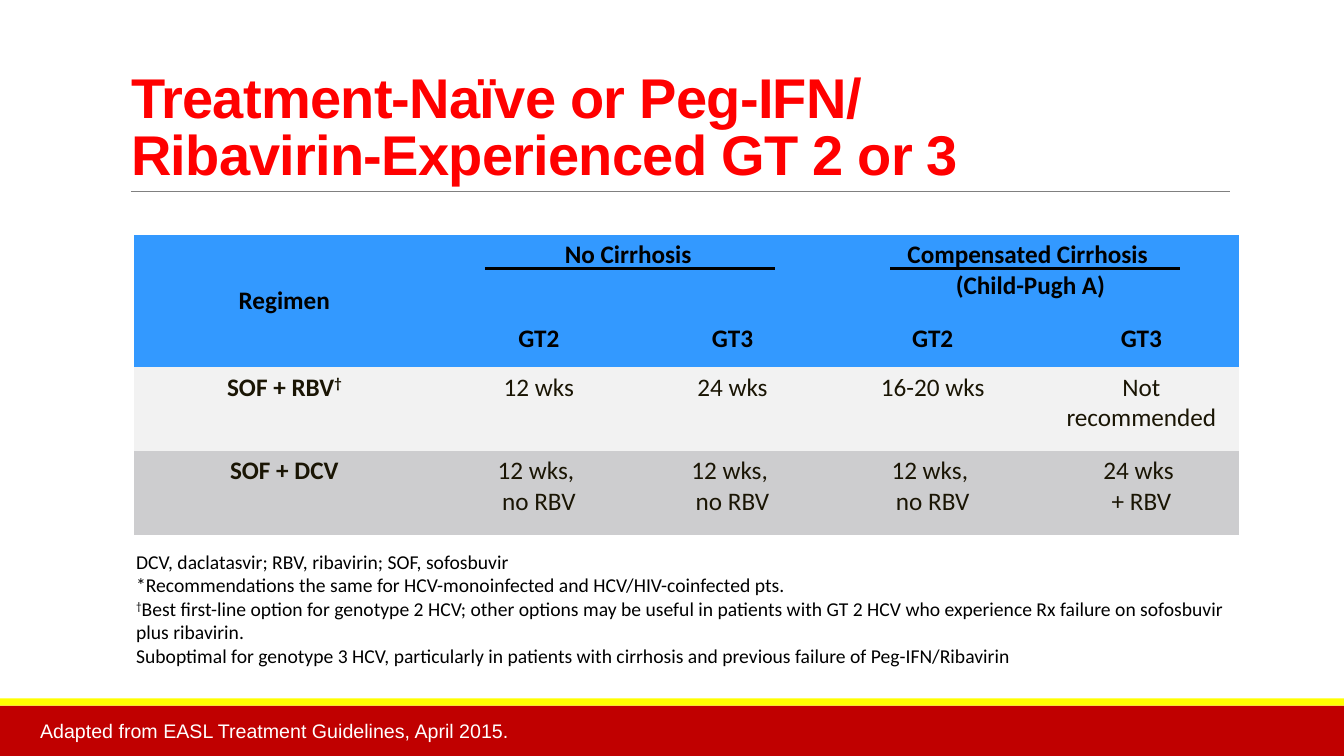
import collections
import itertools

import pptx
import pptx.dml.color
import pptx.enum.shapes
import pptx.enum.text
import pptx.oxml
import pptx.util
from pptx.util import Cm

Align = pptx.enum.text.PP_ALIGN
Anchor = pptx.enum.text.MSO_ANCHOR
Box = collections.namedtuple("Box", "left top width height")
Style = collections.namedtuple("Style", "font size color bold")


class Theme:
    red, yellow, grey, black = "C00000", "FFFF00", "808080", "000000"
    header, light_row, dark_row = "3399FF", "F2F2F2", "CDCDCF"
    title = Style("Arial", 40, "FF0000", True)
    heading = Style("Calibri", 18, black, True)
    regimen = Style("Calibri", 18, "1A1504", True)
    duration = Style("Calibri", 18, "1A1504", False)
    note = Style("Calibri", 14, black, False)
    source = Style("Arial", 14, "FFFFFF", False)


NO_TABLE_STYLE = "{2D5ABB26-0587-4C30-8999-92F81FD0307C}"
COLUMN_WIDTHS = (7.57, 5.26, 4.5, 5.59, 4.93)
ROW_HEIGHTS = (2.11, 1.22, 2.11, 2.11)
HEADER_ROWS = 2
ROW_FILLS = (Theme.header, Theme.header, Theme.light_row, Theme.dark_row)
CELL_TEXTS = (
    ("Regimen", "No Cirrhosis", "", "Compensated Cirrhosis \n(Child-Pugh A)", ""),
    ("", "GT2", "GT3", "GT2", "GT3"),
    ("SOF + RBV†", "12 wks", "24 wks", "16-20 wks", "Not recommended"),
    ("SOF + DCV", *["12 wks, \nno RBV"] * 3, "24 wks \n+ RBV"),
)
NOTES = (
    "DCV, daclatasvir; RBV, ribavirin; SOF, sofosbuvir",
    "*Recommendations the same for HCV-monoinfected and HCV/HIV-coinfected pts.",
    "†Best first-line option for genotype 2 HCV; other options may be useful in "
    "patients with GT 2 HCV who experience Rx failure on sofosbuvir plus ribavirin.",
    "Suboptimal for genotype 3 HCV, particularly in patients with cirrhosis and "
    "previous failure of Peg-IFN/Ribavirin",
)


def rgb(color):
    return pptx.dml.color.RGBColor.from_string(color)


def lengths(box):
    return [Cm(value) for value in box]


def write(para, text, style, align=Align.LEFT, spacing=None):
    """Add text as runs, with line breaks at newlines and daggers raised."""
    para.alignment = align
    for index, line in enumerate(text.split("\n")):
        if index:
            para.add_line_break()
        for piece in filter(None, line.partition("†")):
            span = para.add_run()
            span.text = piece
            span.font.name = style.font
            span.font.size = pptx.util.Pt(style.size)
            span.font.bold = style.bold
            span.font.color.rgb = rgb(style.color)
            properties = span._r.get_or_add_rPr()
            if piece == "†":
                properties.set("baseline", "30000")
            if spacing is not None:
                properties.set("spc", str(spacing))


def add_band(page, box, color):
    band = page.shapes.add_shape(
        pptx.enum.shapes.MSO_SHAPE.RECTANGLE, *lengths(box))
    band.shadow.inherit = False
    band.fill.solid()
    band.fill.fore_color.rgb = rgb(color)
    band.line.fill.background()


def add_rule(page, left, top, width, color, weight):
    rule = page.shapes.add_connector(
        pptx.enum.shapes.MSO_CONNECTOR.STRAIGHT,
        Cm(left), Cm(top), Cm(left + width), Cm(top))
    rule.line.color.rgb = rgb(color)
    rule.line.width = pptx.util.Pt(weight)
    rule._element.spPr.append(pptx.oxml.parse_xml(
        '<a:effectLst xmlns:a='
        '"http://schemas.openxmlformats.org/drawingml/2006/main"/>'))


def add_text_box(page, box, texts, style, anchor=Anchor.TOP):
    frame = page.shapes.add_textbox(*lengths(box)).text_frame
    frame.word_wrap = True
    frame.vertical_anchor = anchor
    for index, text in enumerate(texts):
        para = frame.add_paragraph() if index else frame.paragraphs[0]
        write(para, text, style)


def add_title(page, box):
    title = page.shapes.title
    title.left, title.top, title.width, title.height = lengths(box)
    frame = title.text_frame
    frame.auto_size = pptx.enum.text.MSO_AUTO_SIZE.NONE
    frame.word_wrap = True
    frame.vertical_anchor = Anchor.BOTTOM
    para = frame.paragraphs[0]
    para.line_spacing = 0.85
    write(para, "Treatment-Naïve or Peg-IFN/\nRibavirin-Experienced GT 2 or 3",
          Theme.title, spacing=-50)
    add_rule(page, box.left + 0.25, box.top + box.height, box.width - 0.25,
             Theme.grey, 0.5)


def cell_style(row, column):
    if row < HEADER_ROWS:
        return Theme.heading
    return Theme.duration if column else Theme.regimen


def add_regimen_table(page, box):
    frame = page.shapes.add_table(
        len(ROW_HEIGHTS), len(COLUMN_WIDTHS), *lengths(box))
    table = frame.table
    table.first_row = table.horz_banding = False
    table._tbl.tblPr[0].text = NO_TABLE_STYLE
    for column, width in zip(table.columns, COLUMN_WIDTHS):
        column.width = Cm(width)
    for row, height in zip(table.rows, ROW_HEIGHTS):
        row.height = Cm(height)
    for row, column in itertools.product(
            range(len(ROW_HEIGHTS)), range(len(COLUMN_WIDTHS))):
        cell = table.cell(row, column)
        cell.fill.solid()
        cell.fill.fore_color.rgb = rgb(ROW_FILLS[row])
        write(cell.text_frame.paragraphs[0], CELL_TEXTS[row][column],
              cell_style(row, column), Align.CENTER)
    table.cell(0, 0).merge(table.cell(1, 0))
    table.cell(0, 0).vertical_anchor = Anchor.MIDDLE
    for first, inset in ((1, 1.27), (3, 1.72)):
        table.cell(0, first).merge(table.cell(0, first + 1))
        group_left = box.left + sum(COLUMN_WIDTHS[:first])
        add_rule(page, group_left + inset, box.top + 0.85, 7.3, Theme.black, 2.25)


def add_footer(page, box):
    stripe = 0.18
    add_band(page, Box(box.left, box.top + stripe, box.width, box.height - stripe),
             Theme.red)
    add_band(page, Box(box.left, box.top, box.width, stripe), Theme.yellow)
    add_text_box(page, Box(box.left + 0.76, box.top + 0.38, 23.77, 0.86),
                 ["Adapted from EASL Treatment Guidelines, April 2015."],
                 Theme.source, Anchor.BOTTOM)


def main():
    deck = pptx.Presentation()
    deck.slide_width, deck.slide_height = Cm(33.87), Cm(19.05)
    page = deck.slides.add_slide(deck.slide_layouts.get_by_name("Title Only"))
    add_title(page, Box(3.05, 0.79, 27.94, 4.04))
    add_regimen_table(
        page, Box(3.38, 5.92, sum(COLUMN_WIDTHS), sum(ROW_HEIGHTS)))
    add_text_box(page, Box(3.18, 13.72, 28.75, 3.84), NOTES, Theme.note)
    add_footer(page, Box(0, 17.6, 33.87, 1.45))
    deck.save("out.pptx")


if __name__ == "__main__":
    main()
